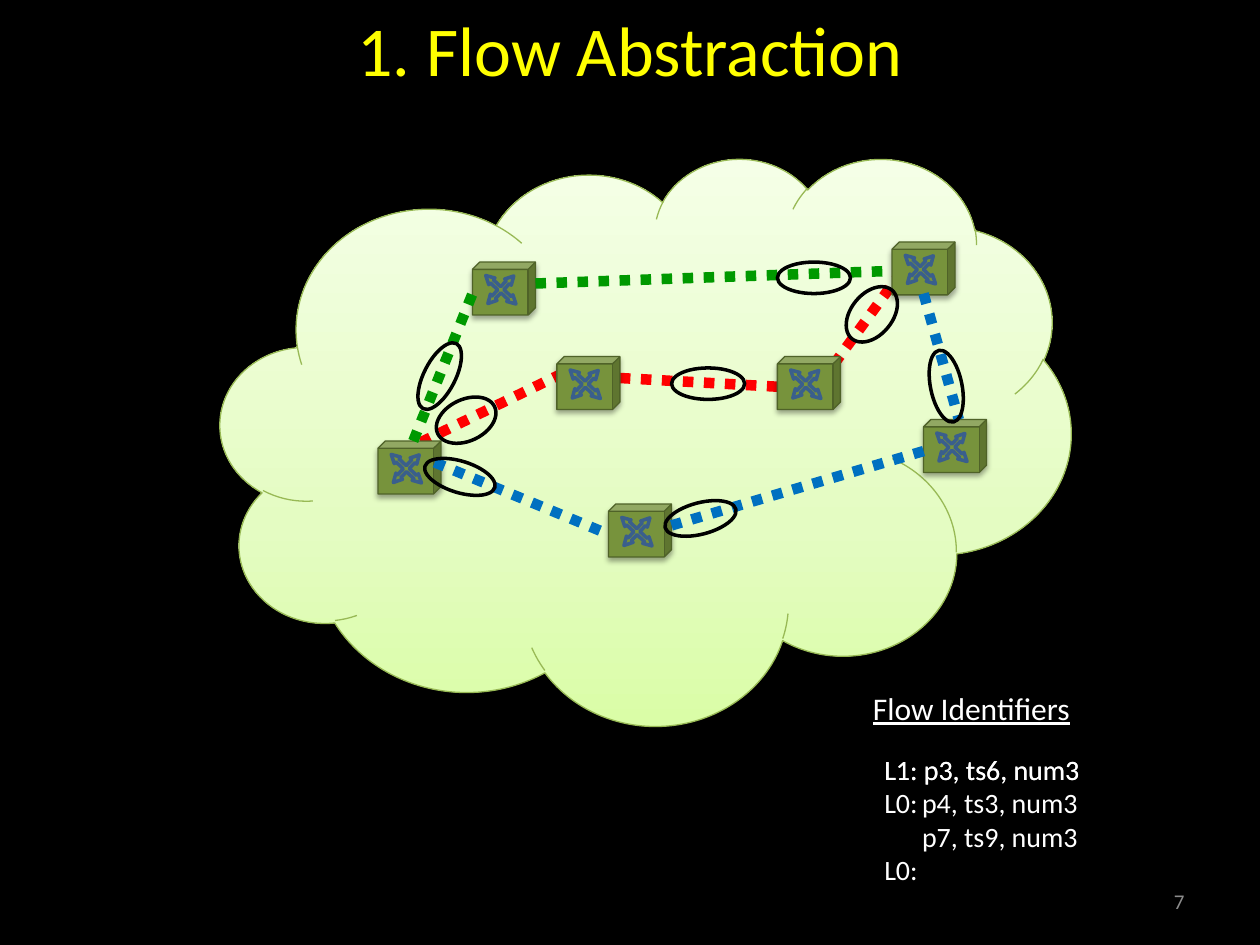
import copy
from dataclasses import dataclass

import pptx
import pptx.dml.color
import pptx.enum.shapes
import pptx.enum.text
import pptx.enum.dml
import pptx.oxml
import pptx.oxml.ns
import pptx.util

Inches = pptx.util.Inches
Pt = pptx.util.Pt
RGB = pptx.dml.color.RGBColor.from_string
SHAPE = pptx.enum.shapes.MSO_SHAPE
ALIGN = pptx.enum.text.PP_ALIGN
ANCHOR = pptx.enum.text.MSO_ANCHOR


@dataclass(frozen=True)
class Theme:
    font: str = "Calibri"
    background: str = "000000"
    title: str = "FFFF00"
    text: str = "FFFFFF"
    number: str = "8C8C8C"
    cloud: tuple = ((0, "DAFDA7"), (0.35, "E4FCC2"), (1, "F5FFE7"))
    cloud_line: str = "98B955"
    cube: str = "77933C"
    cube_line: str = "4F6228"
    arrows: str = "3A5F8C"
    marker: str = "000000"
    red: str = "FF0000"
    green: str = "009900"
    blue: str = "0070C0"
    title_size: int = 40
    heading_size: int = 18
    body_size: int = 16
    number_size: int = 12


theme = Theme()


def add_text(box, lines, size, color, align=ALIGN.LEFT, anchor=ANCHOR.TOP, underline=None):
    """Add a text box; each line is its text and its left indent in inches."""
    frame = slide.shapes.add_textbox(*map(Inches, box)).text_frame
    frame.word_wrap = True
    frame.vertical_anchor = anchor
    for index, (text, indent) in enumerate(lines):
        paragraph = frame.paragraphs[0] if index == 0 else frame.add_paragraph()
        paragraph.alignment = align
        if indent:
            paragraph._p.get_or_add_pPr().set("marL", str(Inches(indent)))
        run = paragraph.add_run()
        run.text = text
        run.font.color.rgb = RGB(color)
        font_format = {"name": theme.font, "size": Pt(size), "underline": underline}
        for name, value in font_format.items():
            setattr(run.font, name, value)


def add_outlined(shapes, kind, box, line, width, fill=None, rotation=0, shadow=None):
    """Add a preset shape; shadow is opacity %, blur and distance in points."""
    shape = shapes.add_shape(kind, *map(Inches, box))
    shape.rotation = rotation
    shape.shadow.inherit = False
    shape.line.color.rgb = RGB(line)
    shape.line.width = Pt(width)
    if fill:
        shape.fill.solid()
        shape.fill.fore_color.rgb = RGB(fill)
    else:
        shape.fill.background()
    if shadow:
        opacity, blur, distance = shadow
        effects = shape._element.spPr.find(pptx.oxml.ns.qn("a:effectLst"))
        effects.append(pptx.oxml.parse_xml(
            f'<a:outerShdw {pptx.oxml.ns.nsdecls("a")} blurRad="{Pt(blur)}" '
            f'dist="{Pt(distance)}" dir="5400000" rotWithShape="0">'
            f'<a:srgbClr val="000000"><a:alpha val="{opacity * 1000}"/></a:srgbClr>'
            '</a:outerShdw>'))
    return shape


# Slide
presentation = pptx.Presentation()
presentation.slide_width = Inches(10)
presentation.slide_height = Inches(7.5)
slide = presentation.slides.add_slide(presentation.slide_layouts[6])
slide.background.fill.solid()
slide.background.fill.fore_color.rgb = RGB(theme.background)

# Title
add_text((0.5, 0, 9, 0.67), [("1. Flow Abstraction", 0)],
         theme.title_size, theme.title, ALIGN.CENTER)

# Network cloud, lighter towards the top
cloud = add_outlined(slide.shapes, SHAPE.CLOUD, (1.75, 1.25, 6.75, 4.5),
                     theme.cloud_line, 0.75, shadow=(38, 3.1, 1.6))
cloud.fill.gradient()
cloud.fill.gradient_angle = 90
stop_list = cloud._element.spPr.find(".//" + pptx.oxml.ns.qn("a:gsLst"))
stop_list.insert(1, copy.deepcopy(stop_list[0]))
for stop, (position, color) in zip(cloud.fill.gradient_stops, theme.cloud):
    stop.position = position
    stop.color.rgb = RGB(color)

# Flow links: the red ones lie behind the switches, the others in front
back_links = [
    (theme.red, (3.34, 3.51), (4.43, 2.98)),
    (theme.red, (4.92, 3), (6.18, 3.07)),
    (theme.red, (7.16, 2.15), (6.59, 2.93)),
]
front_links = [
    (theme.green, (3.28, 3.5), (3.75, 2.33)),
    (theme.blue, (3.45, 3.67), (4.83, 4.24)),
    (theme.green, (4.25, 2.25), (7.08, 2.15)),
    (theme.blue, (7.33, 3.58), (5.33, 4.17)),
    (theme.blue, (7.33, 2.33), (7.61, 3.33)),
]
switches = [(3, 3.5), (7.08, 1.92), (6.17, 2.83), (4.42, 2.83),
            (3.75, 2.08), (4.83, 4), (7.33, 3.33)]

for layer in (back_links, front_links):
    for color, start, end in layer:
        link = slide.shapes.add_connector(pptx.enum.shapes.MSO_CONNECTOR.STRAIGHT,
                                          *map(Inches, start + end))
        link.line.color.rgb = RGB(color)
        line_format = {"width": Pt(6),
                       "dash_style": pptx.enum.dml.MSO_LINE.ROUND_DOT}
        for name, value in line_format.items():
            setattr(link.line, name, value)
        link.line._ln.find(pptx.oxml.ns.qn("a:prstDash")).set("val", "sysDot")
        link._element.spPr.append(pptx.oxml.parse_xml(
            f'<a:effectLst {pptx.oxml.ns.nsdecls("a")}/>'))

    # Switches: a cube with crossed arrows on its face
    if layer is back_links:
        for left, top in switches:
            group = slide.shapes.add_group_shape()
            cube = add_outlined(group.shapes, SHAPE.CUBE, (left, top, 0.5, 0.42),
                                theme.cube_line, 0.75, theme.cube, shadow=(35, 3.1, 1.8))
            cube.adjustments[0] = 0.138
            arrows = add_outlined(group.shapes, SHAPE.QUAD_ARROW,
                                  (left + 0.06, top + 0.07, 0.33, 0.3),
                                  theme.arrows, 2, rotation=43.2)
            for index, value in enumerate((0.113, 0.12, 0.225)):
                arrows.adjustments[index] = value

# Ellipses marking the flow on each link
wide, round_size = (0.58, 0.25), (0.5, 0.33)
markers = [
    ((3.45, 3.17), round_size, 334.5),
    ((5.33, 2.92), wide, 0),
    ((6.67, 2.33), round_size, 309.3),
    ((6.17, 2.08), wide, 0),
    ((3.2, 2.86), wide, 297.1),
    ((7.22, 2.94), wide, 258.5),
    ((5.27, 3.99), wide, 345.3),
    ((3.36, 3.66), wide, 17.1),
]
for corner, size, rotation in markers:
    add_outlined(slide.shapes, SHAPE.OVAL, corner + size, theme.marker, 2, rotation=rotation)

# Flow identifiers: two overlaid lists
add_text((6.83, 5.42, 2.67, 0.4), [("Flow Identifiers", 0)],
         theme.heading_size, theme.text, underline=True)
first_line = ("L1: p3, ts6, num3", 0)
add_text((6.92, 5.92, 2.5, 0.64), [first_line, ("L0:", 0)], theme.body_size, theme.text)
add_text((6.92, 5.92, 2.5, 1.18),
         [first_line, ("p4, ts3, num3", 0.3), ("p7, ts9, num3", 0.3), ("L0:", 0)],
         theme.body_size, theme.text)

# Slide number
add_text((7.17, 6.95, 2.33, 0.4), [("7", 0)], theme.number_size, theme.number,
         ALIGN.RIGHT, ANCHOR.MIDDLE)

presentation.save("out.pptx")
